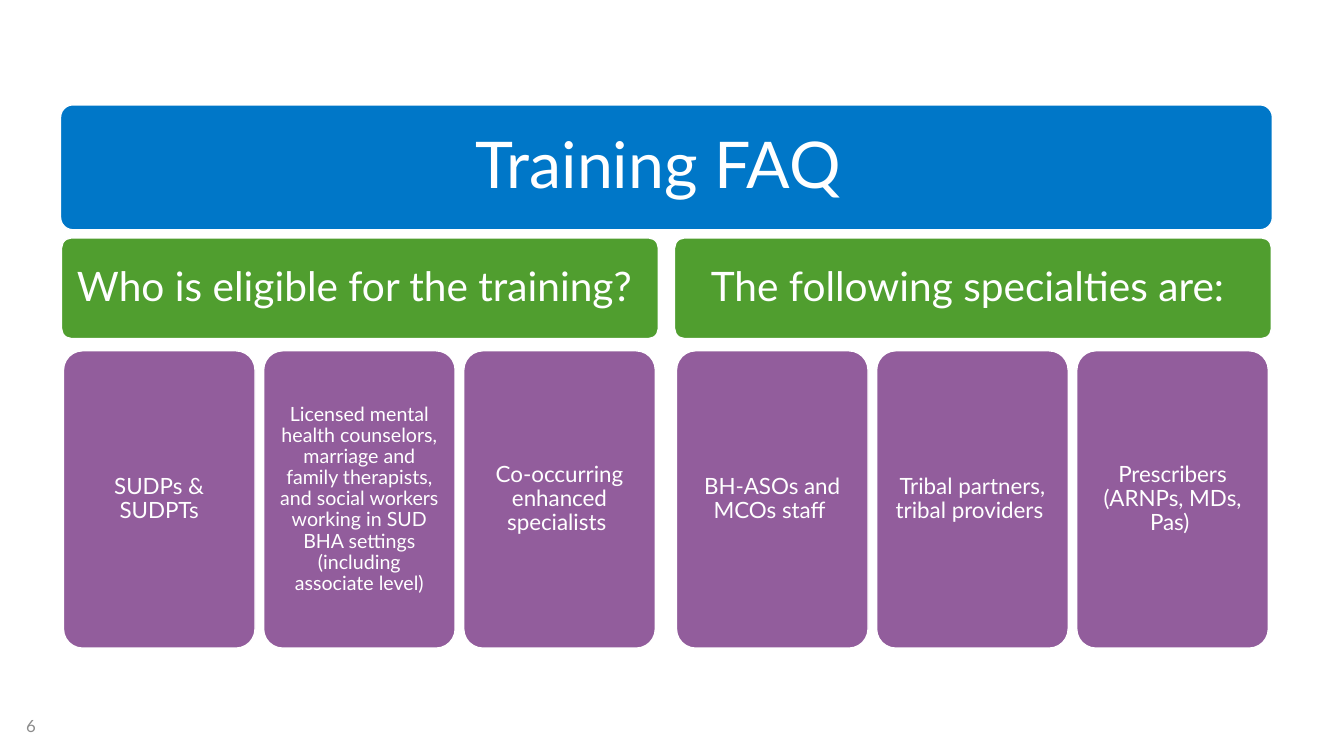
"""Build the Training FAQ slide: a title bar over two questions with three answers each."""
from dataclasses import dataclass

import pptx
import pptx.dml.color
import pptx.enum.shapes
import pptx.enum.text
import pptx.util
from pptx.util import Inches

BLUE, GREEN, PURPLE = "0077C8", "509E2F", "925D9C"
WHITE, GRAY = "FFFFFF", "8C8C8C"
SECTION_WIDTH, SECTION_PITCH = 5.92, 6.08
CARD_WIDTH, CARD_INDENT = 1.9, 0.02
CARDS_PER_SECTION = 3
CARD_PITCH = (SECTION_WIDTH - CARD_WIDTH - 0.05) / (CARDS_PER_SECTION - 1)


@dataclass
class Level:
    """Look and vertical place of one row of the hierarchy."""
    top: float
    width: float
    height: float
    fill: str
    size: float
    margin: float


@dataclass
class Answer:
    """Text of one card and its type size."""
    text: str
    size: float = 16


@dataclass
class Section:
    """A question and its answers."""
    question: str
    answers: list[Answer]


TITLE = Level(1.04, 12.02, 1.24, BLUE, 46, 0.19)
QUESTION = Level(2.36, SECTION_WIDTH, 1, GREEN, 29, 0.12)
CARD = Level(3.48, CARD_WIDTH, 2.95, PURPLE, 16, 0.07)

SECTIONS = [
    Section("Who is eligible for the training? ", [
        Answer("SUDPs & SUDPTs"),
        Answer("Licensed mental health counselors, marriage and family therapists, "
               "and social workers working in SUD BHA settings "
               "(including associate level)", 14),
        Answer("Co-occurring enhanced specialists "),
    ]),
    Section("The following specialties are: ", [
        Answer("BH-ASOs and MCOs staff "),
        Answer("Tribal partners, tribal providers "),
        Answer("Prescribers (ARNPs, MDs, Pas) "),
    ]),
]


def rgb(color: str) -> pptx.dml.color.RGBColor:
    """Turn a hex string into a colour."""
    return pptx.dml.color.RGBColor.from_string(color)


def write(frame, text: str, size: float, color: str):
    """Put text in a frame, centred vertically, and return its paragraph."""
    frame.word_wrap = True
    frame.vertical_anchor = pptx.enum.text.MSO_ANCHOR.MIDDLE
    paragraph = frame.paragraphs[0]
    paragraph.text = text
    paragraph.font.name = "Lato"
    paragraph.font.size = pptx.util.Pt(size)
    paragraph.font.color.rgb = rgb(color)
    return paragraph


def draw_box(slide, level: Level, left: float, text: str, size: float) -> None:
    """Draw one rounded box with centred text."""
    box = slide.shapes.add_shape(
        pptx.enum.shapes.MSO_SHAPE.ROUNDED_RECTANGLE,
        Inches(left), Inches(level.top), Inches(level.width), Inches(level.height))
    box.adjustments[0] = 0.1
    box.shadow.inherit = False
    box.fill.solid()
    box.fill.fore_color.rgb = rgb(level.fill)
    box.line.color.rgb = rgb(WHITE)
    box.line.width = pptx.util.Pt(1)
    frame = box.text_frame
    frame.margin_left = frame.margin_right = Inches(level.margin)
    frame.margin_top = frame.margin_bottom = Inches(level.margin)
    paragraph = write(frame, text, size, WHITE)
    paragraph.alignment = pptx.enum.text.PP_ALIGN.CENTER
    paragraph.line_spacing = 0.9


def draw_section(slide, section: Section, left: float) -> None:
    """Draw a question and the row of answers under it."""
    draw_box(slide, QUESTION, left, section.question, QUESTION.size)
    for column, answer in enumerate(section.answers):
        card_left = left + CARD_INDENT + column * CARD_PITCH
        draw_box(slide, CARD, card_left, answer.text, answer.size)


def main() -> None:
    """Build and save the slide."""
    deck = pptx.Presentation()
    deck.slide_width, deck.slide_height = Inches(13.33), Inches(7.5)
    slide = deck.slides.add_slide(deck.slide_layouts[6])
    draw_box(slide, TITLE, 0.6, "Training FAQ ", TITLE.size)
    for index, section in enumerate(SECTIONS):
        draw_section(slide, section, 0.61 + index * SECTION_PITCH)
    page_number = slide.shapes.add_textbox(
        Inches(0.16), Inches(7.11), Inches(1.01), Inches(0.18))
    write(page_number.text_frame, "6", 12, GRAY)
    deck.save("out.pptx")


if __name__ == "__main__":
    main()
